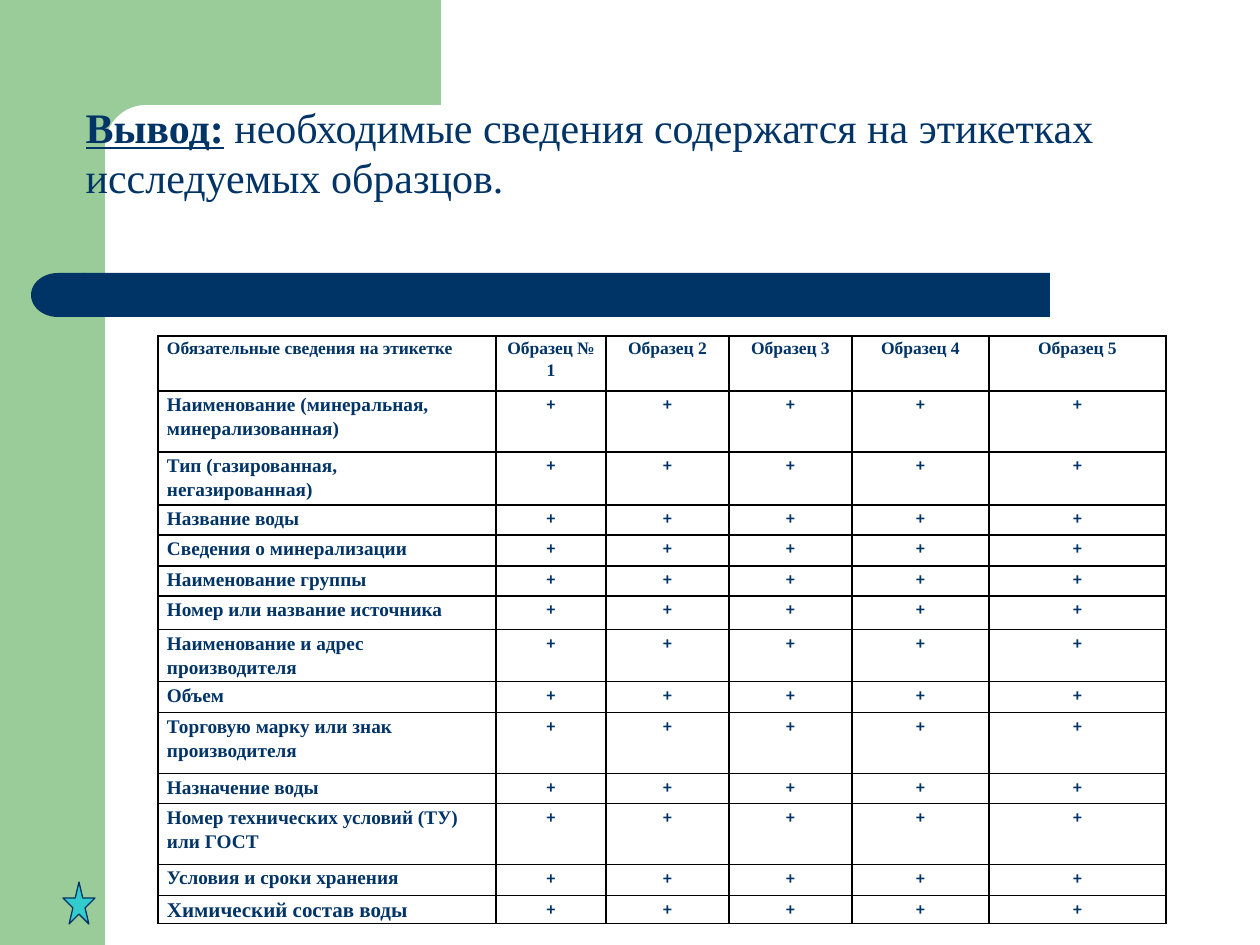
from math import cos, radians, sin

from lxml.etree import SubElement
from pptx import Presentation
from pptx.dml.color import RGBColor
from pptx.enum.shapes import MSO_SHAPE as Preset
from pptx.enum.text import MSO_ANCHOR as Anchor, MSO_AUTO_SIZE as AutoSize, PP_ALIGN as Align
from pptx.oxml.ns import qn
from pptx.util import Emu, Pt

SCALE = 914400 / 126
SLIDE_WIDTH, SLIDE_HEIGHT = 1260, 945
GREEN, NAVY, CYAN, BLACK = "99CC99", "003366", "33CCCC", "000000"
SERIF, SANS = "Times New Roman", "Calibri"

WATERS = ["Образец № 1", "Образец 2", "Образец 3", "Образец 4", "Образец 5"]
COLUMN_WIDTHS = [338, 110, 123, 123, 137, 177]
HEADER = "Обязательные сведения на этикетке"
HEADER_HEIGHT = 55
REQUIREMENTS = [
    ("Наименование (минеральная, минерализованная)", 61),
    ("Тип (газированная, негазированная)", 53),
    ("Название воды", 30),
    ("Сведения о минерализации", 31),
    ("Наименование группы", 30),
    ("Номер или название источника", 34),
    ("Наименование и адрес производителя", 52),
    ("Объем", 31),
    ("Торговую марку или знак производителя", 61),
    ("Назначение воды", 30),
    ("Номер технических условий (ТУ) или ГОСТ", 61),
    ("Условия и сроки хранения", 31),
    ("Химический состав воды", 28),
]


def px(length):
    """Turn a length in px into EMU."""
    return Emu(round(length * SCALE))


def color(value):
    """Turn a hex string into a colour."""
    return RGBColor.from_string(value)


def paint(shape, fill, line=None):
    """Give a shape a flat fill and an optional thin line."""
    shape.shadow.inherit = False
    shape.fill.solid()
    shape.fill.fore_color.rgb = color(fill)
    if line:
        shape.line.color.rgb = color(line)
        shape.line.width = Pt(0.75)
    else:
        shape.line.fill.background()


def add_preset(slide, preset, box, fill, line=None):
    """Add a painted preset shape in a px box."""
    shape = slide.shapes.add_shape(preset, *map(px, box))
    paint(shape, fill, line)
    return shape


def add_run(paragraph, text, size, font=SERIF, bold=True, underline=False):
    """Add one formatted run to a paragraph."""
    run = paragraph.add_run()
    run.text = text
    run.font.name = font
    run.font.size = Pt(size)
    run.font.bold = bold
    run.font.underline = underline
    run.font.color.rgb = color(NAVY)


def add_corner(slide, left, top, width, height):
    """Draw the green side band and the top block with its rounded inner corner."""
    band, depth, radius, overlap = 105, 105, 41, 63
    add_preset(slide, Preset.RECTANGLE, (left, top, band, height), GREEN)
    center_x, center_y = left + band + radius, top + depth + radius
    arc = [
        (center_x + radius * cos(radians(angle)), center_y - radius * sin(radians(angle)))
        for angle in range(90, 181, 5)
    ]
    bottom = center_y + 15
    points = [(left + width, top), (left + width, top + depth), *arc,
              (left + band, bottom), (left + overlap, bottom), (left + overlap, top)]
    emu_points = [(px(x), px(y)) for x, y in points]
    builder = slide.shapes.build_freeform(*emu_points[0])
    builder.add_line_segments(emu_points[1:], close=True)
    paint(builder.convert_to_shape(), GREEN)


def add_divider(slide, left, top, width, height):
    """Draw the navy bar with its rounded left end."""
    cap = 54
    add_preset(slide, Preset.RECTANGLE, (left + cap - 1, top, width - cap + 1, height), NAVY)
    end = add_preset(slide, Preset.FLOWCHART_DELAY, (left, top, cap, height), NAVY)
    end.element.spPr.find(qn("a:xfrm")).set("flipH", "1")


def add_title(slide, *box):
    """Place the conclusion in the title placeholder, in front of the decoration."""
    title = slide.shapes.title
    title.left, title.top, title.width, title.height = map(px, box)
    frame = title.text_frame
    frame.word_wrap = True
    frame.auto_size = AutoSize.SHAPE_TO_FIT_TEXT
    frame.vertical_anchor = Anchor.MIDDLE
    paragraph = frame.paragraphs[0]
    paragraph.alignment = Align.LEFT
    add_run(paragraph, "Вывод:", 24, underline=True)
    add_run(paragraph, " необходимые сведения содержатся на этикетках исследуемых образцов.",
            24, bold=False)
    title.element.getparent().append(title.element)


def add_borders(cell):
    """Put a thin black line on every side of a cell."""
    properties = cell._tc.get_or_add_tcPr()
    for index, side in enumerate(("lnL", "lnR", "lnT", "lnB")):
        line = SubElement(properties, qn(f"a:{side}"), w=str(Pt(1)))
        fill = SubElement(line, qn("a:solidFill"))
        SubElement(fill, qn("a:srgbClr"), val=BLACK)
        properties.insert(index, line)


def fill_cell(cell, text, size, alignment, font=SERIF, space_after=0):
    """Write one cell and set its margins, fill and borders."""
    cell.margin_left = cell.margin_right = px(9)
    cell.margin_top = cell.margin_bottom = 0
    cell.fill.background()
    add_borders(cell)
    paragraph = cell.text_frame.paragraphs[0]
    paragraph.alignment = alignment
    paragraph.line_spacing = 1.15
    paragraph.space_after = Pt(space_after)
    add_run(paragraph, text, size, font)


def add_label_table(slide, left, top):
    """Build the table of label requirements against the water samples."""
    heights = [HEADER_HEIGHT] + [height for _, height in REQUIREMENTS]
    frame = slide.shapes.add_table(len(heights), len(COLUMN_WIDTHS), px(left), px(top),
                                   px(sum(COLUMN_WIDTHS)), px(sum(heights)))
    table = frame.table
    table.first_row = table.horz_banding = False
    for column, width in zip(table.columns, COLUMN_WIDTHS):
        column.width = px(width)
    for row, height in zip(table.rows, heights):
        row.height = px(height)
    fill_cell(table.cell(0, 0), HEADER, 10, Align.JUSTIFY)
    for column, water in enumerate(WATERS, 1):
        fill_cell(table.cell(0, column), water, 10, Align.CENTER)
    for row, (requirement, _) in enumerate(REQUIREMENTS, 1):
        size, space_after = (12, 0) if row == len(REQUIREMENTS) else (11, 10)
        fill_cell(table.cell(row, 0), requirement, size, Align.LEFT, space_after=space_after)
        for column in range(1, len(COLUMN_WIDTHS)):
            fill_cell(table.cell(row, column), "+", 10, Align.CENTER, SANS)


def main():
    """Build the slide and save it."""
    presentation = Presentation()
    presentation.slide_width, presentation.slide_height = px(SLIDE_WIDTH), px(SLIDE_HEIGHT)
    slide = presentation.slides.add_slide(presentation.slide_layouts[5])
    add_corner(slide, 0, 0, 441, SLIDE_HEIGHT)
    add_divider(slide, 31, 273, 1019, 44)
    add_preset(slide, Preset.STAR_5_POINT, (63, 882, 32, 42), CYAN, NAVY)
    add_label_table(slide, 158, 336)
    add_title(slide, 73, 94, 1187, 115)
    presentation.save("out.pptx")


if __name__ == "__main__":
    main()
